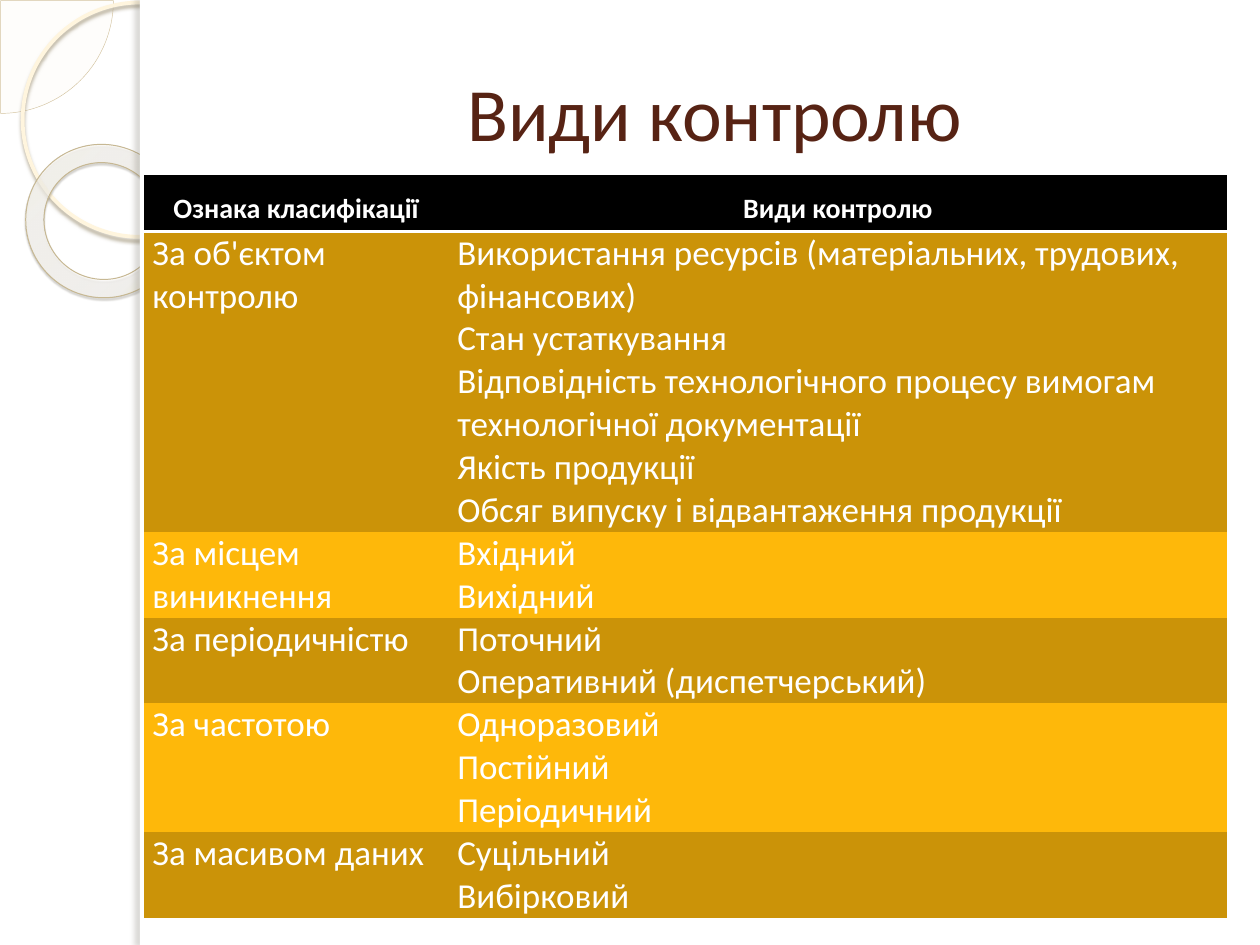
import collections

import pptx
import pptx.dml.color
import pptx.enum.shapes
import pptx.enum.text
import pptx.oxml
import pptx.oxml.ns
import pptx.util

Box = collections.namedtuple("Box", "left top width height")
SHAPE = pptx.enum.shapes.MSO_SHAPE
ALIGN = pptx.enum.text.PP_ALIGN
NAMESPACE = pptx.oxml.ns.nsdecls("a")
FONT = "Calibri"
NO_TABLE_STYLE = "{2D5ABB26-0587-4C30-8999-92F81FD0307C}"

# The grid unit is one tenth of the slide's width.
COLUMNS, ROWS = 10, 7.5
UNIT = pptx.util.Inches(1)
SIDEBAR_WIDTH = 1.11
LINE_HEIGHT = 0.34
HEADER_HEIGHT = 0.45
COLUMN_WIDTHS = (2.42, 6.18)
BAND_COLOURS = ("CB9308", "FEB80A")

HEADER = ("Ознака класифікації", "Види контролю")
# Criterion, kinds of control, lines of text in the row
CRITERIA = [
    ("За об'єктом контролю", [
        "Використання ресурсів (матеріальних, трудових, фінансових)",
        "Стан устаткування",
        "Відповідність технологічного процесу вимогам технологічної документації",
        "Якість продукції",
        "Обсяг випуску і відвантаження продукції"], 7),
    ("За місцем виникнення", ["Вхідний", "Вихідний"], 2),
    ("За періодичністю", ["Поточний", "Оперативний (диспетчерський)"], 2),
    ("За частотою", ["Одноразовий", "Постійний", "Періодичний"], 3),
    ("За масивом даних", ["Суцільний", "Вибірковий"], 2),
]


def colour(value):
    return pptx.dml.color.RGBColor.from_string(value)


def grid(*lengths):
    return [round(length * UNIT) for length in lengths]


def add_run(paragraph, text, size, text_colour, bold=False):
    run = paragraph.add_run()
    run.text = text
    run.font.name = FONT
    run.font.size = pptx.util.Pt(size)
    run.font.bold = bold
    run.font.color.rgb = colour(text_colour)


def add_decoration(slide, kind, box, fill=None, line=None, shadow=None):
    """Line is (colour, points); shadow is (colour, opacity, blur, distance, angle)."""
    shape = slide.shapes.add_shape(kind, *grid(*box))
    shape.shadow.inherit = False
    if fill:
        shape.fill.solid()
        shape.fill.fore_color.rgb = colour(fill)
    else:
        shape.fill.background()
    if line:
        shape.line.color.rgb = colour(line[0])
        shape.line.width = pptx.util.Pt(line[1])
    else:
        shape.line.fill.background()
    if shadow:
        shade, opacity, blur, distance, angle = shadow
        effects = shape.element.spPr.find(pptx.oxml.ns.qn("a:effectLst"))
        effects.append(pptx.oxml.parse_xml(
            f'<a:outerShdw {NAMESPACE} blurRad="{pptx.util.Pt(blur)}" '
            f'dist="{pptx.util.Pt(distance)}" dir="{angle * 60000}" algn="tl" rotWithShape="0">'
            f'<a:srgbClr val="{shade}"><a:alpha val="{opacity * 1000}"/></a:srgbClr>'
            '</a:outerShdw>'))
    return shape


def set_opacity(shape, percent):
    solid = shape.element.spPr.find(pptx.oxml.ns.qn("a:solidFill"))
    solid[0].append(pptx.oxml.parse_xml(f'<a:alpha {NAMESPACE} val="{percent * 1000}"/>'))


def set_radial_gradient(shape, stops):
    stop_xml = "".join(
        f'<a:gs pos="{position * 1000}"><a:srgbClr val="{shade}">'
        f'<a:alpha val="{opacity * 1000}"/></a:srgbClr></a:gs>'
        for position, shade, opacity in stops)
    gradient = pptx.oxml.parse_xml(
        f'<a:gradFill {NAMESPACE} rotWithShape="1"><a:gsLst>{stop_xml}</a:gsLst>'
        '<a:path path="circle"><a:fillToRect l="-408000" t="-50000" r="508000" b="150000"/>'
        '</a:path></a:gradFill>')
    properties = shape.element.spPr
    empty_fill = properties.find(pptx.oxml.ns.qn("a:noFill"))
    properties.replace(empty_fill, gradient)


def add_sidebar(slide, box):
    """Circles in the strip, cut off by the white panel to its right."""
    def inside(left, top, width, height):
        return Box(box.left + left, box.top + top, width, height)

    quarter = add_decoration(slide, SHAPE.PIE, inside(-0.89, -0.89, 1.79, 1.79),
                             "FEFAF4", ("D3C39F", 0.25))
    quarter.adjustments[0] = 0
    quarter.adjustments[1] = 54
    set_opacity(quarter, 33)

    add_decoration(slide, SHAPE.OVAL, inside(0.18, 0.02, 1.86, 1.86),
                   line=("FFF5DE", 2.15), shadow=("B0A68F", 85, 2, 2, 90))

    ring = add_decoration(slide, SHAPE.DONUT, inside(0.2, 1.15, 1.23, 1.21),
                          line=("C7B893", 0.58), shadow=("5A5444", 35, 1, 1.2, 75))
    ring.rotation = 38.6
    ring.adjustments[0] = 0.12
    set_radial_gradient(ring, [(0, "FFFCF6", 70), (70, "FFFEFB", 55), (100, "F0D28E", 60)])

    add_decoration(slide, SHAPE.RECTANGLE,
                   inside(box.width, 0, COLUMNS - box.width, box.height), "FFFFFF")
    add_decoration(slide, SHAPE.RECTANGLE, inside(box.width, 0, 0.08, box.height),
                   "FFFFFF", shadow=("736F63", 25, 3, 3, 180))


def add_title(slide, box, text):
    title = slide.shapes.title
    title.left, title.top, title.width, title.height = grid(*box)
    title.element.getparent().append(title.element)  # in front of the panel
    frame = title.text_frame
    frame.word_wrap = True
    frame.vertical_anchor = pptx.enum.text.MSO_ANCHOR.MIDDLE
    paragraph = frame.paragraphs[0]
    paragraph.alignment = ALIGN.CENTER
    add_run(paragraph, text, 43, "572314")


def fill_cell(cell, lines, fill, size, is_header=False):
    cell.margin_left = cell.margin_right = pptx.util.Inches(0.07)
    cell.margin_top = cell.margin_bottom = 0
    cell.fill.solid()
    cell.fill.fore_color.rgb = colour(fill)
    frame = cell.text_frame
    for index, text in enumerate(lines):
        paragraph = frame.add_paragraph() if index else frame.paragraphs[0]
        paragraph.alignment = ALIGN.CENTER if is_header else ALIGN.LEFT
        if is_header:
            paragraph.line_spacing = 1.5
        add_run(paragraph, text, size, "FFFFFF", is_header)


def add_bottom_border(cell):
    cell.fill.fore_color  # the fill exists, and borders go before it
    cell._tc.get_or_add_tcPr().insert(0, pptx.oxml.parse_xml(
        f'<a:lnB {NAMESPACE} w="{pptx.util.Pt(2)}"><a:solidFill>'
        '<a:srgbClr val="FFFFFF"/></a:solidFill></a:lnB>'))


def add_control_table(slide, box):
    frame = slide.shapes.add_table(len(CRITERIA) + 1, len(HEADER), *grid(*box))
    table = frame.table
    table.horz_banding = False
    style = table._tbl.tblPr.find(pptx.oxml.ns.qn("a:tableStyleId"))
    style.text = NO_TABLE_STYLE
    for column, width in zip(table.columns, grid(*COLUMN_WIDTHS)):
        column.width = width

    heights = [HEADER_HEIGHT] + [count * LINE_HEIGHT for _, _, count in CRITERIA]
    for row, height in zip(table.rows, grid(*heights)):
        row.height = height

    for column, text in enumerate(HEADER):
        cell = table.cell(0, column)
        fill_cell(cell, [text], "000000", 16, is_header=True)
        add_bottom_border(cell)
    for index, (criterion, kinds, _) in enumerate(CRITERIA):
        band = BAND_COLOURS[index % 2]
        fill_cell(table.cell(index + 1, 0), [criterion], band, 20)
        fill_cell(table.cell(index + 1, 1), kinds, band, 20)


def main():
    presentation = pptx.Presentation()
    presentation.slide_width, presentation.slide_height = grid(COLUMNS, ROWS)
    slide = presentation.slides.add_slide(presentation.slide_layouts[5])
    add_sidebar(slide, Box(0, 0, SIDEBAR_WIDTH, ROWS))
    add_title(slide, Box(1.57, 0.3, 8.2, 1.17), "Види контролю")
    add_control_table(slide, Box(1.14, 1.39, sum(COLUMN_WIDTHS), 5.78))
    presentation.save("out.pptx")


if __name__ == "__main__":
    main()
